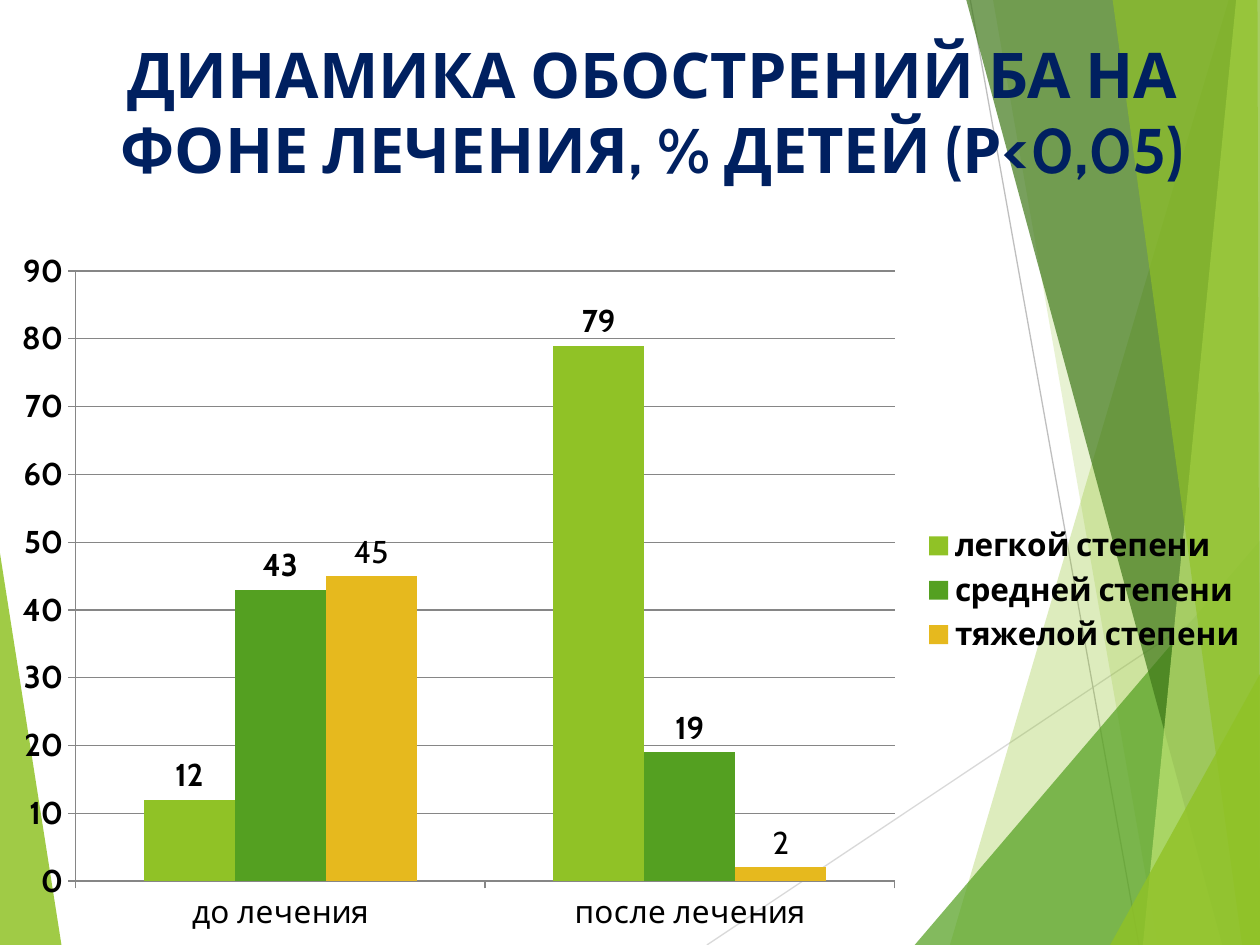
"""Build a slide with a clustered column chart of exacerbations before and after treatment."""
from lxml.etree import SubElement
from pptx import Presentation
from pptx.chart.data import CategoryChartData
from pptx.dml.color import RGBColor
from pptx.enum.chart import XL_CHART_TYPE, XL_LABEL_POSITION, XL_LEGEND_POSITION, XL_TICK_MARK
from pptx.enum.shapes import MSO_CONNECTOR
from pptx.enum.text import MSO_ANCHOR, PP_ALIGN
from pptx.oxml.ns import qn
from pptx.util import Cm, Pt

HUES = {"lime": "90C226", "green": "54A021", "dark": "3F7819", "pale": "C0E474", "gold": "E6B91E",
        "navy": "002060", "black": "000000", "grid": "868686", "light": "D9D9D9", "grey": "BFBFBF"}
RGB = {name: RGBColor.from_string(code) for name, code in HUES.items()}
WIDE, HIGH = 25.4, 19.05


def put(item, vals):
    """Set each named value on an object."""
    for name, val in vals.items():
        setattr(item, name, val)


def stroke(line, hue):
    """Give a line its colour and the common width."""
    line.color.rgb = RGB[hue]
    line.width = Pt(0.75)


deck = Presentation()
put(deck, {"slide_width": Cm(WIDE), "slide_height": Cm(HIGH)})
slide = deck.slides.add_slide(deck.slide_layouts[5])
shapes = slide.shapes

facets = [
    ("lime", 85, [(0, 11.15), (1.24, HIGH), (0, HIGH)]),
    ("lime", 30, [(24.77, 0), (19.15, HIGH), (WIDE, HIGH), (WIDE, 0)]),
    ("lime", 20, [(20.02, 0), (23.34, HIGH), (WIDE, HIGH), (WIDE, 0)]),
    ("green", 72, [(18.44, HIGH), (WIDE, 10.9), (WIDE, HIGH)]),
    ("dark", 70, [(19.48, 0), (24.64, HIGH), (WIDE, HIGH), (WIDE, 0)]),
    ("pale", 70, [(24.92, 0), (23.04, HIGH), (WIDE, HIGH), (WIDE, 0)]),
    ("lime", 65, [(22.43, 0), (25.04, HIGH), (WIDE, HIGH), (25.35, 0)]),
    ("lime", 80, [(22.38, HIGH), (WIDE, 13.59), (WIDE, HIGH)]),
]
rays = [("light", 14.25, HIGH, WIDE, 11.61), ("grey", 19.56, 0, 22.96, HIGH)]

for rank, (hue, alpha, points) in enumerate(facets):
    spots = [(x * 100, y * 100) for x, y in points]
    form = shapes.build_freeform(*spots[0], scale=Cm(0.01))
    form.add_line_segments(spots[1:], close=True)
    facet = form.convert_to_shape()
    facet.shadow.inherit = False
    facet.fill.solid()
    facet.fill.fore_color.rgb = RGB[hue]
    facet.line.fill.background()
    tint = facet._element.spPr.find(".//" + qn("a:srgbClr"))
    SubElement(tint, qn("a:alpha"), val=str(alpha * 1000))
    if rank == 0:
        for shade, *ends in rays:
            ray = shapes.add_connector(MSO_CONNECTOR.STRAIGHT, *map(Cm, ends))
            stroke(ray.line, shade)
            SubElement(ray._element.spPr, qn("a:effectLst"))

title = shapes.title
put(title, {"left": Cm(1.7), "top": Cm(0.58), "width": Cm(22.91), "height": Cm(4.78)})
frame = title.text_frame
frame.text = "ДИНАМИКА ОБОСТРЕНИЙ БА НА ФОНЕ ЛЕЧЕНИЯ, % ДЕТЕЙ (Р<0,05)"
put(frame, {"word_wrap": True, "vertical_anchor": MSO_ANCHOR.TOP})
head = frame.paragraphs[0]
head.alignment = PP_ALIGN.CENTER
font = head.runs[0].font
put(font, {"name": "Cabin", "size": Pt(36), "bold": True})
font.color.rgb = RGB["navy"]
shapes._spTree.append(title._element)

data = CategoryChartData()
data.categories = ["до лечения", "после лечения"]
series = [("легкой степени", (12, 79), "lime", True),
          ("средней степени", (43, 19), "green", True),
          ("тяжелой степени", (45, 2), "gold", False)]
for name, vals, hue, bold in series:
    data.add_series(name, vals)
chart = shapes.add_chart(XL_CHART_TYPE.COLUMN_CLUSTERED, Cm(0), Cm(4.75),
                         Cm(WIDE), Cm(14.3), data).chart
put(chart, {"has_title": False, "has_legend": True})
put(chart.font, {"name": "Cabin", "size": Pt(18), "bold": False})
chart.font.color.rgb = RGB["black"]
put(chart.legend, {"position": XL_LEGEND_POSITION.RIGHT, "include_in_layout": False})

plot = chart.plots[0]
put(plot, {"gap_width": 150, "overlap": 0, "vary_by_categories": False})
for bar, (name, vals, hue, bold) in zip(plot.series, series):
    bar.format.fill.solid()
    bar.format.fill.fore_color.rgb = RGB[hue]
    tags = bar.data_labels
    put(tags, {"show_value": True, "position": XL_LABEL_POSITION.OUTSIDE_END})
    put(tags.font, {"name": "Cabin", "size": Pt(18), "bold": bold})
    tags.font.color.rgb = RGB["black"]

scale = chart.value_axis
put(scale, {"minimum_scale": 0, "maximum_scale": 90, "major_unit": 10, "has_major_gridlines": True})
stroke(scale.major_gridlines.format.line, "grid")
for axis in (scale, chart.category_axis):
    axis.major_tick_mark = XL_TICK_MARK.OUTSIDE
    stroke(axis.format.line, "grid")
for part, bold in ((scale.tick_labels, True), (chart.category_axis.tick_labels, False),
                   (chart.legend, True)):
    put(part.font, {"name": "Cabin", "size": Pt(18), "bold": bold})
    part.font.color.rgb = RGB["black"]

area = chart._chartSpace.chart.plotArea
layout = area.find(qn("c:layout"))
if layout is None:
    layout = SubElement(area, qn("c:layout"))
    area.insert(0, layout)
manual = SubElement(layout, qn("c:manualLayout"))
for tag, val in (("layoutTarget", "inner"), ("xMode", "edge"), ("yMode", "edge"),
                 ("x", "0.06"), ("y", "0.05"), ("w", "0.65"), ("h", "0.86")):
    SubElement(manual, qn("c:" + tag), val=val)

deck.save("out.pptx")
